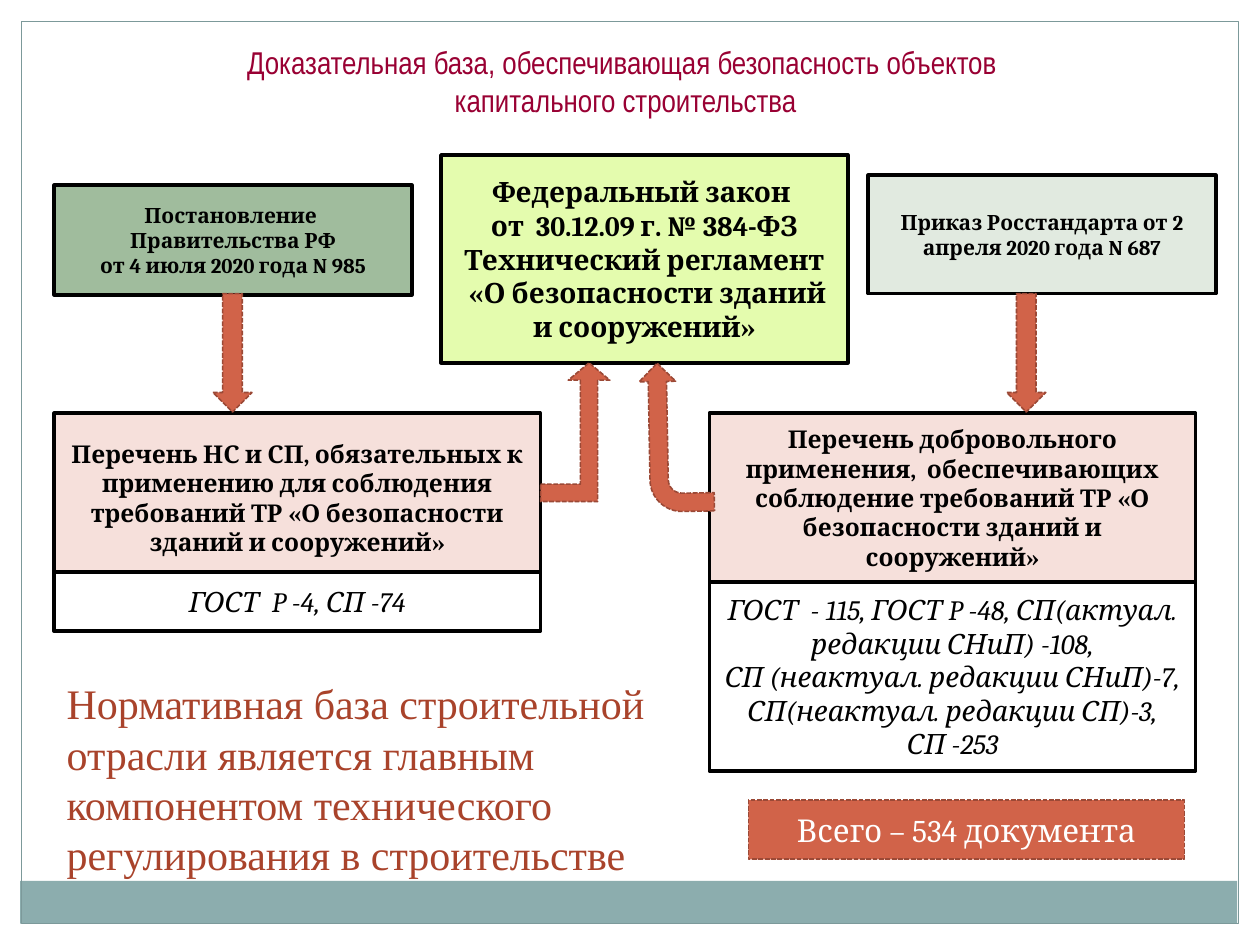
"""Build a slide on the regulatory basis for the safety of construction."""
from pptx import Presentation
from pptx.dml.color import RGBColor
from pptx.enum.dml import MSO_LINE_DASH_STYLE as DASH
from pptx.enum.shapes import MSO_SHAPE as SHAPE
from pptx.enum.text import MSO_ANCHOR as ANCHOR, PP_ALIGN as ALIGN
from pptx.util import Inches, Pt

prs = Presentation()
prs.slide_width, prs.slide_height = Inches(10), Inches(7.5)
s = prs.slides.add_slide(prs.slide_layouts[6])


def add_shape(kind, box, fill=None, line=None, width=0.9, dash=None):
    x, y, w, h = box
    sp = s.shapes.add_shape(
        kind,
        int(prs.slide_width * x / 100), int(prs.slide_height * y / 100),
        int(prs.slide_width * w / 100), int(prs.slide_height * h / 100))
    sp.shadow.inherit = False
    for part, color in ((sp.fill, fill), (sp.line.fill, line)):
        if color:
            part.solid()
            part.fore_color.rgb = RGBColor.from_string(color)
        else:
            part.background()
    if line:
        sp.line.width = Pt(width)
        sp.line.dash_style = dash
    return sp


def set_text(sp, text, size, color="000000", font="Cambria", bold=False,
             italic=False, align=ALIGN.CENTER, anchor=ANCHOR.MIDDLE):
    tf = sp.text_frame
    tf.word_wrap = True
    tf.vertical_anchor = anchor
    for i, line in enumerate(text.split("\n")):
        p = tf.add_paragraph() if i else tf.paragraphs[0]
        p.text = line
        p.alignment = align
        p.font.name, p.font.size = font, Pt(size)
        p.font.bold, p.font.italic = bold, italic
        p.font.color.rgb = RGBColor.from_string(color)


add_shape(SHAPE.RECTANGLE, (1.6, 93.2, 96.6, 4.53), "8CADAE")
add_shape(SHAPE.RECTANGLE, (1.7, 2.27, 96.6, 95.47), None, "7C999A", 0.75)

title = add_shape(SHAPE.RECTANGLE, (9.1, 3.87, 81.1, 9.47))
set_text(title, "Доказательная база, обеспечивающая безопасность объектов \vкапитального строительства",
         18, "990033", "Arial Narrow", anchor=ANCHOR.TOP)

LEFT, RIGHT, LIST_TOP, LIST_W, LIST_H = 4.3, 56.3, 43.73, 38.6, 17.87
documents = [
    ((35, 16.4, 32.3, 22), "E4FCAE", 16, True,
     "Федеральный закон \nот  30.12.09 г. № 384-ФЗ\nТехнический регламент\n"
     " «О безопасности зданий и сооружений»"),
    ((LEFT, 19.6, 28.4, 11.6), "A0BC9D", 12, True,
     "Постановление \nПравительства РФ\nот 4 июля 2020 года N 985"),
    ((68.9, 18.53, 27.6, 12.53), "E1EAE0", 12, True,
     "Приказ Росстандарта от 2 апреля 2020 года N 687"),
    ((LEFT, LIST_TOP, LIST_W, LIST_H), "F6E0DB", 14, True,
     "Перечень НС и СП, обязательных к применению для соблюдения "
     "требований ТР «О безопасности зданий и сооружений»"),
    ((LEFT, 60.53, LIST_W, 6.27), "FFFFFF", 16, False,
     "ГОСТ  P -4, СП -74"),
    ((RIGHT, LIST_TOP, LIST_W, LIST_H), "F6E0DB", 14, True,
     "Перечень добровольного применения,  обеспечивающих соблюдение "
     "требований ТР «О безопасности зданий и сооружений»"),
    ((RIGHT, LIST_TOP + LIST_H, LIST_W, 20), "FFFFFF", 16, False,
     "ГОСТ  - 115, ГОСТ P -48, СП(актуал. редакции СНиП) -108,\n"
     "СП (неактуал. редакции СНиП)-7,\nСП(неактуал. редакции СП)-3,\nСП -253"),
]
for box, fill, size, bold, text in documents:
    sp = add_shape(SHAPE.RECTANGLE, box, fill, "000000", 2)
    set_text(sp, text, size, bold=bold, italic=not bold)

accent = dict(fill="D16349", line="9B4936", dash=DASH.SQUARE_DOT)
total = add_shape(SHAPE.RECTANGLE, (59.4, 84.67, 34.6, 6.27), **accent)
set_text(total, "Всего – 534 документа", 18, "FFFFFF")

summary = add_shape(SHAPE.RECTANGLE, (LEFT, 70.93, 49.2, 22.93))
set_text(summary, "Нормативная база строительной отрасли является главным "
         "компонентом технического регулирования в строительстве",
         24, "A9432B", "Times New Roman", align=ALIGN.LEFT)

for x in (16.9, 79.9):
    add_shape(SHAPE.DOWN_ARROW, (x, 31.07, 3.1, 12.53), **accent)
bent = add_shape(SHAPE.BENT_ARROW, (47.8, 42.4, 11.8, 7.73), **accent)
bent.rotation = 269
bent_up = add_shape(SHAPE.BENT_UP_ARROW, (42.9, 38.4, 5.5, 14.67), **accent)
bent_up.adjustments[1] = 0.3

prs.save("out.pptx")
